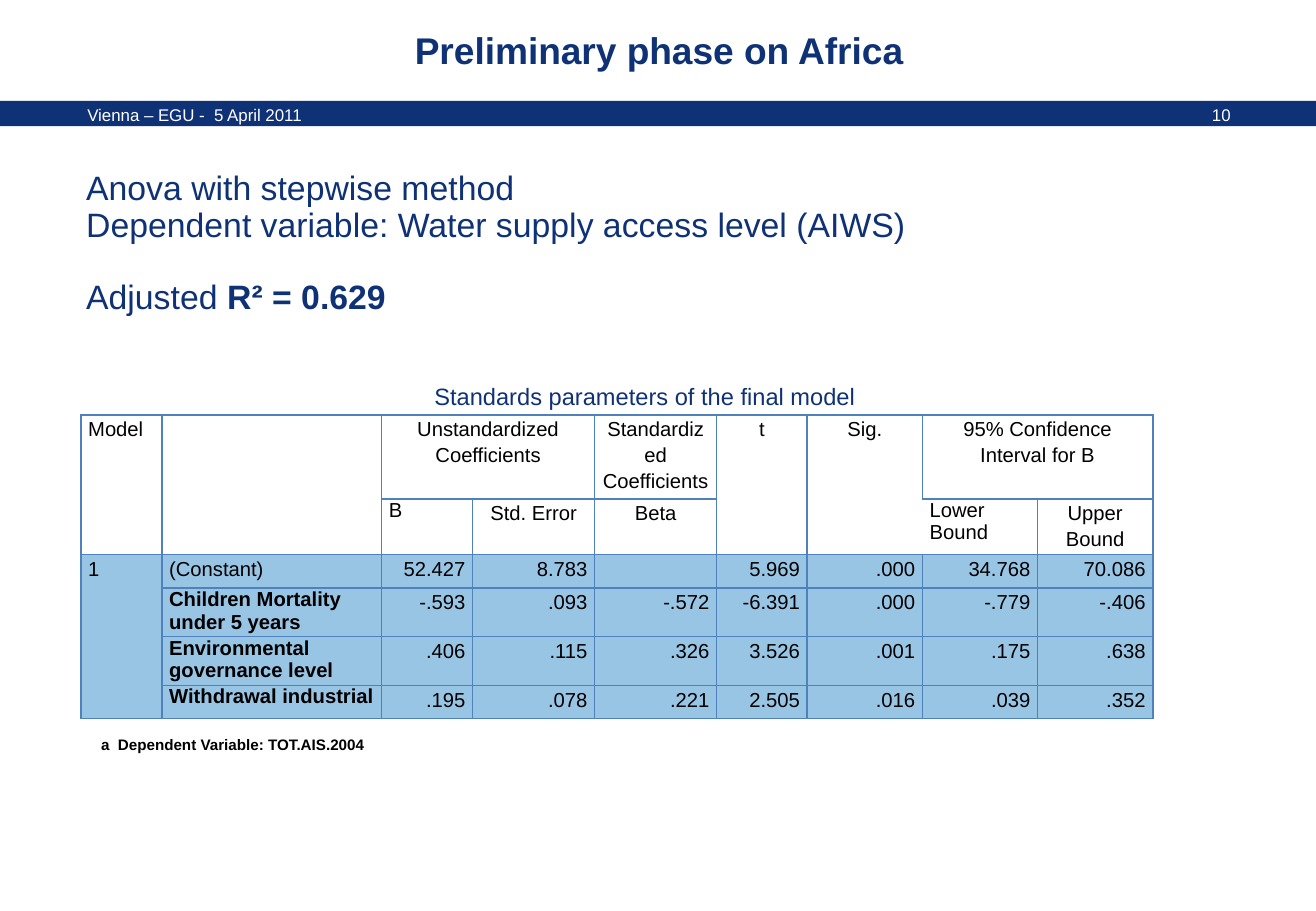
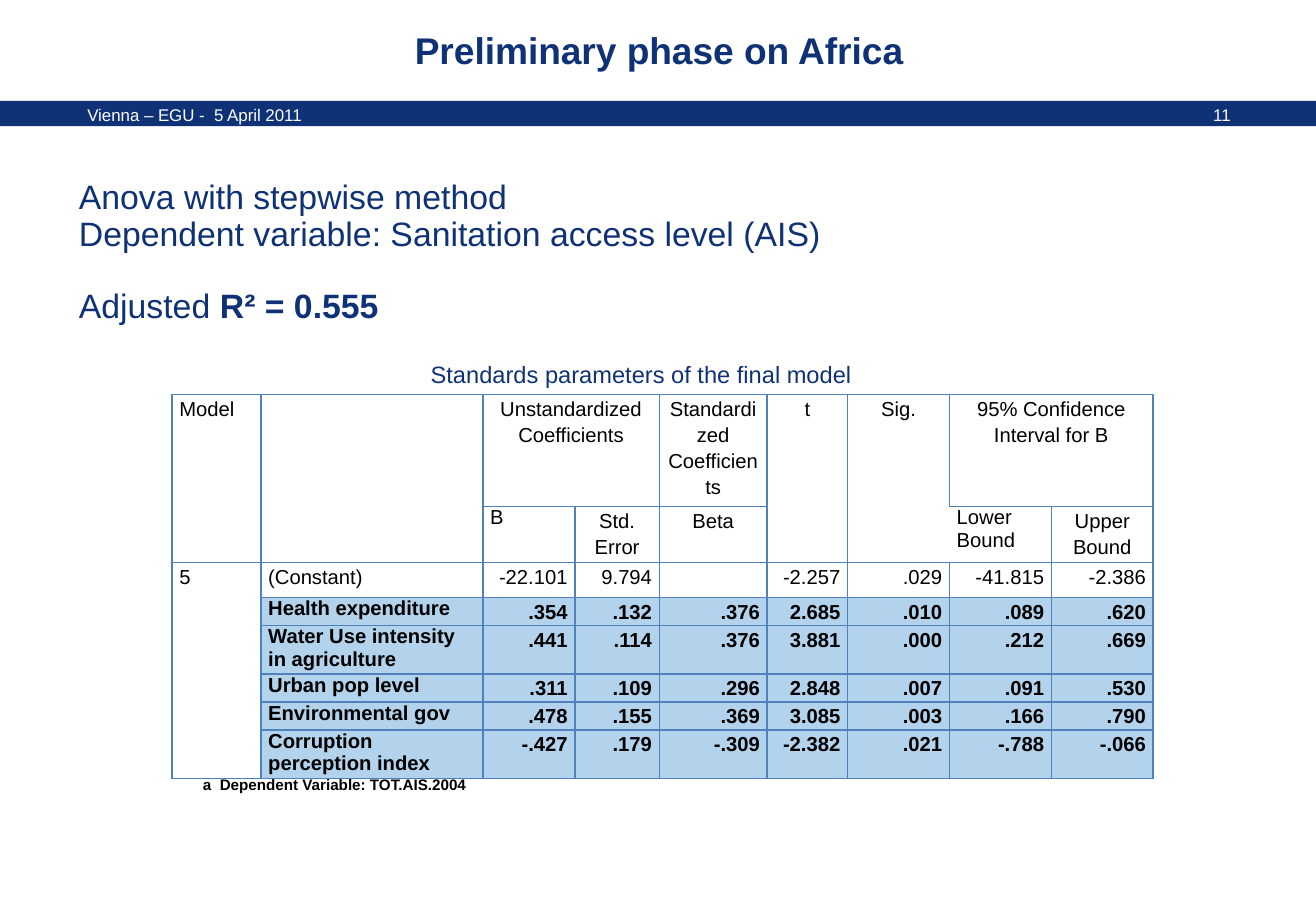
import pptx
import pptx.dml.color
import pptx.enum.shapes
import pptx.enum.text
import pptx.oxml.ns
import pptx.util
from lxml import etree

Pt = pptx.util.Pt
ALIGN = pptx.enum.text.PP_ALIGN
ANCHOR = pptx.enum.text.MSO_ANCHOR
qn = pptx.oxml.ns.qn

FONT = "Arial"
NAVY, WHITE, BLACK = "0F3277", "FFFFFF", "000000"
BORDER, HIGHLIGHT = "4F81BD", "0070C0"
WIDTH, HEIGHT = 780, 540
BODY_RIGHT = 713.5
CELL_INSET = 4.3

TITLE = "Preliminary phase on Africa"
EVENT = "Vienna – EGU -  5 April 2011"
METHOD = "Anova with stepwise method"
CAPTION = "Standards parameters of the final model"
FOOTNOTE = "a  Dependent Variable: TOT.AIS.2004"

HEADER = [
    ["Model", "", "Unstandardized Coefficients", "", "Standardized Coefficients",
     "t", "Sig.", "95% Confidence Interval for B", ""],
    ["", "", "B", "Std. Error", "Beta", "", "", "Lower Bound", "Upper Bound"],
]
HEADER_MERGES = [(0, 0, 1, 0), (0, 1, 1, 1), (0, 2, 0, 3), (0, 5, 1, 5), (0, 6, 1, 6), (0, 7, 0, 8)]
BARE_SIDES = {(1, 6): "R", (1, 7): "L"}
TIGHT_LABELS = {"B", "Lower Bound"}

SLIDES = [
    {
        "number": "10",
        "dependent": "Dependent variable: Water supply access level (AIWS)",
        "fit": "R² = 0.629",
        "body": (51.1, 104.5), "caption_gap": 43,
        "table": (48, 246), "footnote": (41.8, 432),
        "columns": [48, 130.2, 54, 72.3, 72.3, 53.7, 68.3, 68.3, 68.3],
        "rows": [46.5, 30.8, 19.8, 27, 27, 19.8],
        "tint": 40, "tint_from": (2, 0), "bold_values": False,
        "coefficients": [
            ["1", "(Constant)", "52.427", "8.783", "", "5.969", ".000", "34.768", "70.086"],
            ["", "Children Mortality under 5 years", "-.593", ".093", "-.572", "-6.391", ".000", "-.779", "-.406"],
            ["", "Environmental governance level", ".406", ".115", ".326", "3.526", ".001", ".175", ".638"],
            ["", "Withdrawal industrial", ".195", ".078", ".221", "2.505", ".016", ".039", ".352"],
        ],
    },
    {
        "number": "11",
        "dependent": "Dependent variable: Sanitation access level (AIS)",
        "fit": "R² = 0.555",
        "body": (46.8, 109.8), "caption_gap": 24.7,
        "table": (102, 234), "footnote": (102.2, 455.8),
        "columns": [52.7, 131.6, 54.5, 50, 64, 47.7, 60.4, 60.4, 60.4],
        "rows": [62, 31, 20.7, 15.5, 26.8, 15.5, 15.5, 26.8],
        "tint": 30, "tint_from": (3, 1), "bold_values": True,
        "coefficients": [
            ["5", "(Constant)", "-22.101", "9.794", "", "-2.257", ".029", "-41.815", "-2.386"],
            ["", "Health expenditure", ".354", ".132", ".376", "2.685", ".010", ".089", ".620"],
            ["", "Water Use intensity in agriculture", ".441", ".114", ".376", "3.881", ".000", ".212", ".669"],
            ["", "Urban pop level", ".311", ".109", ".296", "2.848", ".007", ".091", ".530"],
            ["", "Environmental gov", ".478", ".155", ".369", "3.085", ".003", ".166", ".790"],
            ["", "Corruption perception index", "-.427", ".179", "-.309", "-2.382", ".021", "-.788", "-.066"],
        ],
    },
]


def color(value):
    return pptx.dml.color.RGBColor.from_string(value)


def style(paragraph, size, ink, bold=False, align=ALIGN.LEFT):
    paragraph.alignment = align
    font = paragraph.font
    font.name, font.size, font.bold = FONT, Pt(size), bold
    font.color.rgb = color(ink)


def add_frame(slide, left, top, width, height, inset=0):
    frame = slide.shapes.add_textbox(Pt(left), Pt(top), Pt(width), Pt(height)).text_frame
    frame.word_wrap = True
    frame.margin_left = frame.margin_right = Pt(inset)
    frame.margin_top = frame.margin_bottom = Pt(inset / 2)
    return frame


def add_line(slide, box, text, size, ink, bold=False, align=ALIGN.LEFT, inset=0):
    frame = add_frame(slide, *box, inset)
    frame.paragraphs[0].text = text
    style(frame.paragraphs[0], size, ink, bold, align)
    return frame


def add_common_parts(slide, number):
    band = slide.shapes.add_shape(
        pptx.enum.shapes.MSO_SHAPE.RECTANGLE, Pt(0), Pt(59.8), Pt(WIDTH), Pt(15))
    band.shadow.inherit = False
    band.fill.solid()
    band.fill.fore_color.rgb = color(NAVY)
    band.line.fill.background()
    add_line(slide, (51.8, 62, 566.6, 12), EVENT, 10, WHITE)
    add_line(slide, (625, 62, 104.4, 12), number, 10, WHITE, align=ALIGN.RIGHT)
    add_line(slide, (171.4, 16, 438.5, 26.6), TITLE, 22, NAVY, True, ALIGN.CENTER)


def add_body(slide, content):
    left, top = content["body"]
    frame = add_frame(slide, left, top, BODY_RIGHT - left, 130)
    lines = [
        ([METHOD], 0, 20, ALIGN.LEFT),
        ([content["dependent"]], 3.75, 20, ALIGN.LEFT),
        (["Adjusted ", content["fit"]], 24.75, 20, ALIGN.LEFT),
        ([CAPTION], content["caption_gap"], 14, ALIGN.CENTER),
    ]
    for index, (pieces, gap, size, align) in enumerate(lines):
        paragraph = frame.add_paragraph() if index else frame.paragraphs[0]
        paragraph.line_spacing = 0.75
        if gap:
            paragraph.space_before = Pt(gap)
        style(paragraph, size, NAVY, align=align)
        for piece in pieces:
            run = paragraph.add_run()
            run.text = piece
            if piece == content["fit"]:
                run.font.bold = True


def draw_borders(cell, bare_side):
    properties = cell._tc.get_or_add_tcPr()
    for side in "LRTB":
        line = etree.SubElement(properties, qn("a:ln" + side), w=str(Pt(1)))
        if side == bare_side:
            etree.SubElement(line, qn("a:noFill"))
        else:
            fill = etree.SubElement(line, qn("a:solidFill"))
            etree.SubElement(fill, qn("a:srgbClr"), val=BORDER)


def tint_cell(cell, percent):
    cell.fill.solid()
    cell.fill.fore_color.rgb = color(HIGHLIGHT)
    swatch = cell._tc.tcPr.find(".//" + qn("a:solidFill") + "/" + qn("a:srgbClr") + "[last()]")
    for swatch in cell._tc.tcPr.findall(qn("a:solidFill") + "/" + qn("a:srgbClr")):
        etree.SubElement(swatch, qn("a:alpha"), val=str(percent * 1000))


def fill_cell(cell, row, column, text, content):
    is_header = row < len(HEADER)
    is_factor = row > len(HEADER)
    is_label = column == 1
    cell.margin_left = cell.margin_right = Pt(CELL_INSET)
    cell.margin_top = cell.margin_bottom = Pt(0)
    paragraph = cell.text_frame.paragraphs[0]
    if text:
        paragraph.text = text
    else:
        paragraph._p.get_or_add_endParaRPr().set("sz", "1200")
    if not (text in TIGHT_LABELS or is_factor and is_label):
        paragraph.line_spacing = 1.15
    if column < 2 or text in TIGHT_LABELS:
        align = ALIGN.LEFT
    else:
        align = ALIGN.CENTER if is_header else ALIGN.RIGHT
    bold = is_factor and (is_label or content["bold_values"])
    style(paragraph, 12, BLACK, bold, align)
    draw_borders(cell, BARE_SIDES.get((row, column)))
    first_row, first_column = content["tint_from"]
    if row >= first_row and column >= first_column:
        tint_cell(cell, content["tint"])
    else:
        cell.fill.background()


def add_coefficients(slide, content):
    cells = HEADER + content["coefficients"]
    columns, rows = content["columns"], content["rows"]
    left, top = content["table"]
    table = slide.shapes.add_table(
        len(rows), len(columns), Pt(left), Pt(top), Pt(sum(columns)), Pt(sum(rows))).table
    table.first_row = table.horz_banding = False
    for column, width in zip(table.columns, columns):
        column.width = Pt(width)
    for row, height in zip(table.rows, rows):
        row.height = Pt(height)
    for row, texts in enumerate(cells):
        for column, text in enumerate(texts):
            fill_cell(table.cell(row, column), row, column, text, content)
    model_merge = (len(HEADER), 0, len(rows) - 1, 0)
    for top_row, first, bottom_row, last in HEADER_MERGES + [model_merge]:
        table.cell(top_row, first).merge(table.cell(bottom_row, last))


def main():
    deck = pptx.Presentation()
    deck.slide_width, deck.slide_height = Pt(WIDTH), Pt(HEIGHT)
    for content in SLIDES:
        slide = deck.slides.add_slide(deck.slide_layouts[6])
        add_common_parts(slide, content["number"])
        add_body(slide, content)
        add_coefficients(slide, content)
        footnote = add_line(slide, (*content["footnote"], 192, 18), FOOTNOTE, 9, BLACK,
                            True, ALIGN.CENTER, 7.2)
        footnote.vertical_anchor = ANCHOR.MIDDLE
    deck.save("out.pptx")


if __name__ == "__main__":
    main()
